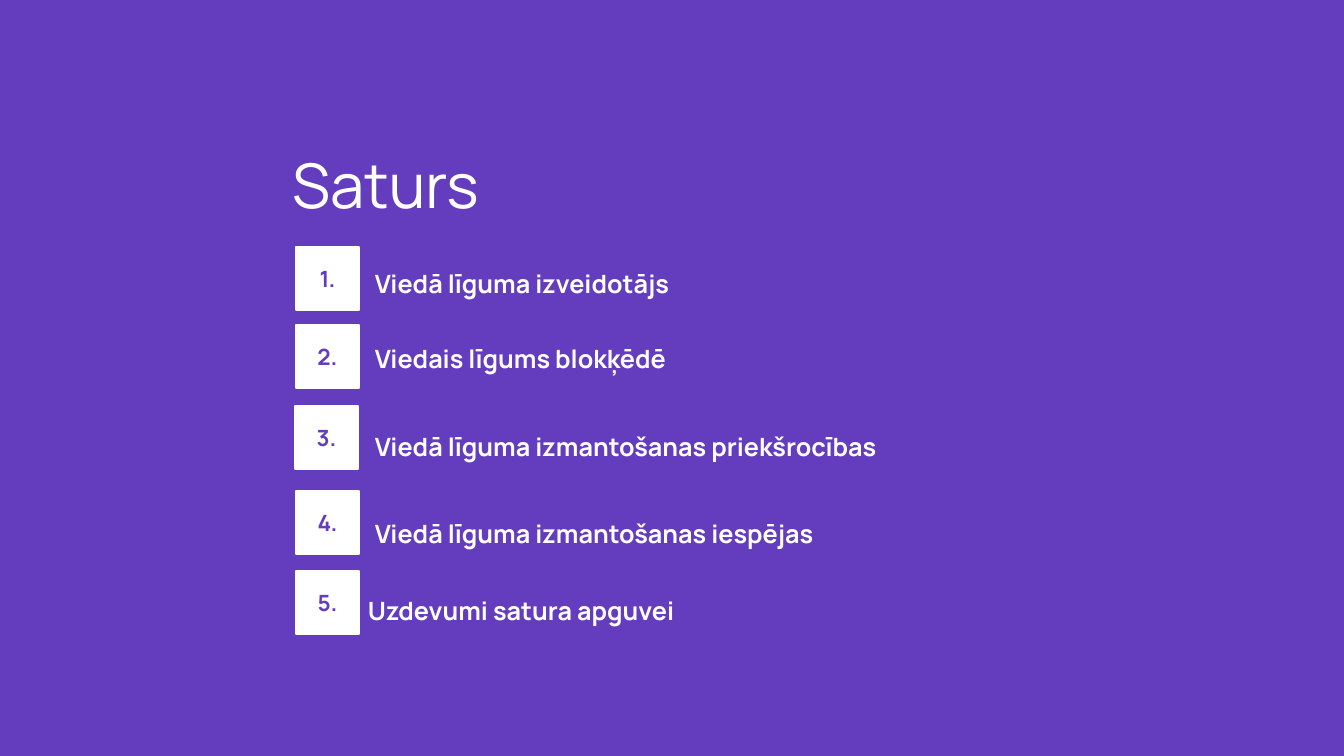
from pptx import Presentation
from pptx import util as u
from pptx.dml.color import RGBColor
from pptx.enum import shapes, text

PX = 914400 / 100.8
PURPLE, WHITE = "643CBE", "FFFFFF"


def px(length):
    return u.Emu(round(length * PX))


def colour(hex_code):
    return RGBColor.from_string(hex_code)


class Contents:
    font = "Manrope"

    def __init__(self, deck):
        self.page = deck.slides.add_slide(deck.slide_layouts[5])
        background = self.page.background.fill
        background.solid()
        background.fore_color.rgb = colour(PURPLE)

    def set_words(self, frame, words, size, ink, bold):
        frame.word_wrap = True
        para = frame.paragraphs[0]
        para.text = words
        para.font.name = self.font
        para.font.size = u.Pt(size)
        para.font.bold = bold
        para.font.color.rgb = colour(ink)
        return para

    def title(self, words, left, top, width, height):
        box = self.page.shapes.title
        box.left, box.top, box.width, box.height = map(px, (left, top, width, height))
        frame = box.text_frame
        frame.auto_size = text.MSO_AUTO_SIZE.NONE
        frame.vertical_anchor = text.MSO_ANCHOR.TOP
        para = self.set_words(frame, words, 44, WHITE, False)
        para.alignment = text.PP_ALIGN.LEFT
        para.line_spacing = 0.9

    def number(self, words, left, top, side=63):
        box = self.page.shapes.add_shape(
            shapes.MSO_SHAPE.RECTANGLE, px(left), px(top), px(side), px(side))
        box.shadow.inherit = False
        box.fill.solid()
        box.fill.fore_color.rgb = colour(WHITE)
        box.line.color.rgb = colour(WHITE)
        box.line.width = u.Pt(1)
        frame = box.text_frame
        frame.margin_left = frame.margin_right = px(4)
        frame.margin_top = frame.margin_bottom = px(4)
        frame.vertical_anchor = text.MSO_ANCHOR.MIDDLE
        para = self.set_words(frame, words, 16, PURPLE, True)
        para.alignment = text.PP_ALIGN.CENTER

    def label(self, words, left, top, width=532, height=40):
        box = self.page.shapes.add_textbox(px(left), px(top), px(width), px(height))
        box.text_frame.auto_size = text.MSO_AUTO_SIZE.SHAPE_TO_FIT_TEXT
        self.set_words(box.text_frame, words, 18, WHITE, True)


def main():
    deck = Presentation()
    deck.slide_width, deck.slide_height = px(1344), px(756)
    contents = Contents(deck)

    # Heading
    contents.title("Saturs", 282, 150, 1062, 64)

    # Topics: number left and top, label left and top, wording
    topics = [
        (296, 247, 365, 263, "Viedā līguma izveidotājs"),
        (296, 325, 365, 338, "Viedais līgums blokķēdē"),
        (295, 406, 365, 426, "Viedā līguma izmantošanas priekšrocības"),
        (296, 491, 365, 513, "Viedā līguma izmantošanas iespējas"),
        (296, 571, 358, 590, "Uzdevumi satura apguvei"),
    ]
    for index, (square_x, square_y, label_x, label_y, words) in enumerate(topics, 1):
        contents.number(f"{index}.", square_x, square_y)
        contents.label(words, label_x, label_y)

    deck.save("out.pptx")


if __name__ == "__main__":
    main()
